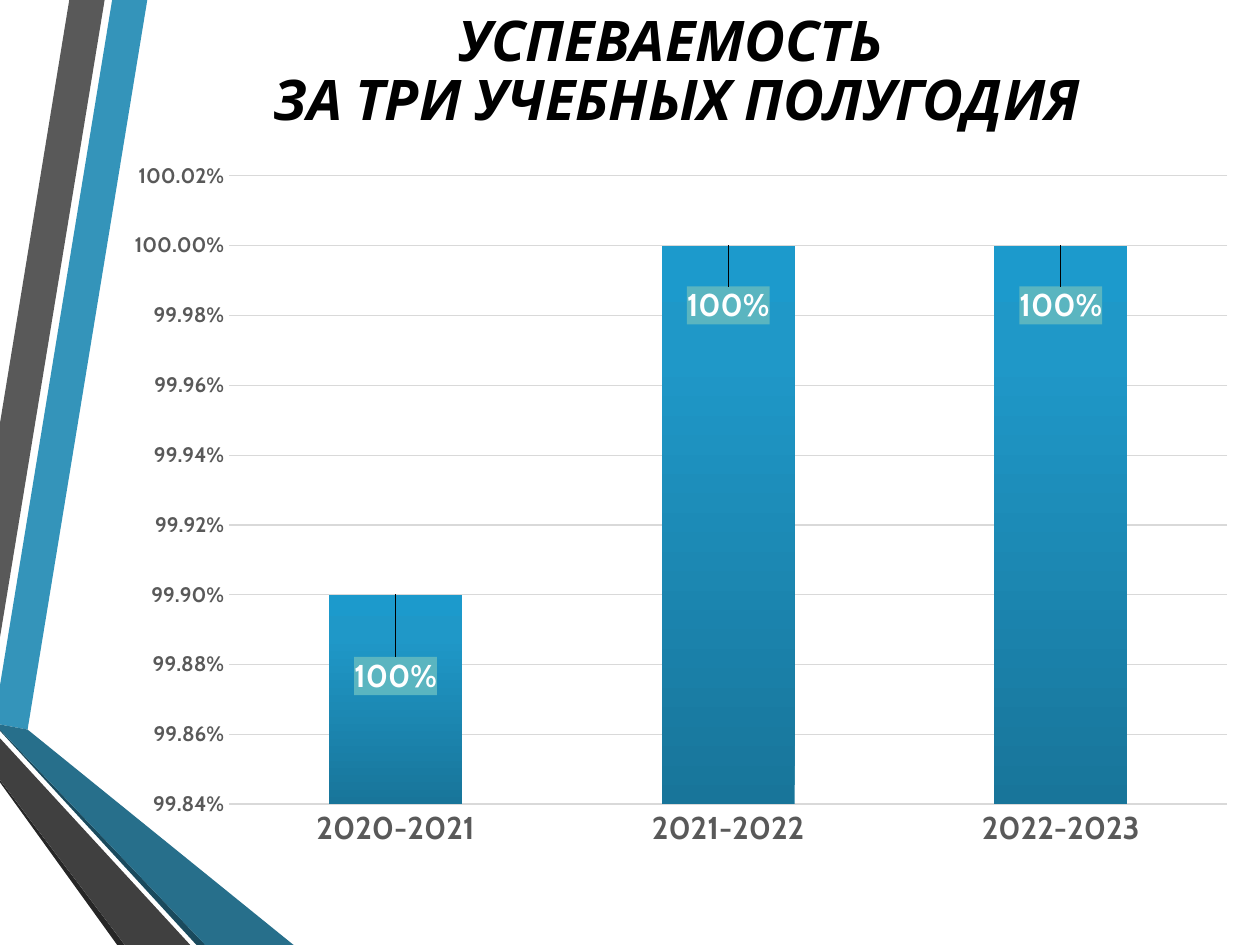
from typing import NamedTuple

from lxml import etree
from pptx import Presentation
from pptx.chart.data import CategoryChartData
from pptx.dml.color import RGBColor
from pptx.enum.chart import XL_CHART_TYPE, XL_LABEL_POSITION, XL_TICK_MARK
from pptx.enum.text import MSO_ANCHOR, PP_ALIGN
from pptx.oxml import parse_xml
from pptx.oxml.ns import nsdecls, qn
from pptx.util import Pt

COLUMNS = XL_CHART_TYPE.COLUMN_CLUSTERED
INSIDE_END = XL_LABEL_POSITION.INSIDE_END
NO_TICK = XL_TICK_MARK.NONE
CENTER = PP_ALIGN.CENTER
MIDDLE = MSO_ANCHOR.MIDDLE

FONT = "Cabin"
COLORS = {
    "black": "000000",
    "white": "FFFFFF",
    "axis_text": "595959",
    "grid": "D9D9D9",
    "label_fill": "5AB5C0",
    "band_blue": "3494BA",
    "band_gray": "595959",
    "fold_black": "262626",
    "fold_navy": "1A4A5D",
    "tail_blue": "276F8B",
    "tail_gray": "404040",
}
BAR_GRADIENT = [(0, "18759A"), (80, "1F98C8"), (100, "1C9ACC")]


class Band(NamedTuple):
    color: str
    points: list[tuple[float, float]]


class YearResult(NamedTuple):
    years: str
    rate: float
    label_drop: float  # share of the chart height


BANDS = [
    Band("band_blue", [(0, 391.7), (0, 414), (15.8, 416.9), (84.2, 0), (64.1, 0)]),
    Band("band_gray", [(59.8, 0), (39.6, 0), (0, 241.9), (0, 364.3)]),
    Band("fold_black", [(0, 445.7), (0, 447.1), (67, 540), (71.3, 540)]),
    Band("fold_navy", [(0, 416.9), (0, 417.6), (112.3, 540), (117.4, 540)]),
    Band("tail_blue", [(0, 416.9), (117.4, 540), (167.8, 540), (15.8, 416.9), (0, 414)]),
    Band("tail_gray", [(0, 445.7), (71.3, 540), (108.7, 540), (0, 421.9)]),
]
RESULTS = [
    YearResult("2020-2021", 0.999, 0.08),
    YearResult("2021-2022", 1, 0.05),
    YearResult("2022-2023", 1, 0.05),
]


def rgb(name: str) -> RGBColor:
    return RGBColor.from_string(COLORS[name])


def style_font(font, size: float, color: str) -> None:
    font.name = FONT
    font.size = Pt(size)
    font.bold = True
    font.color.rgb = rgb(color)


def draw_band(slide, band: Band) -> None:
    start, *rest = [(Pt(x), Pt(y)) for x, y in band.points]
    builder = slide.shapes.build_freeform(*start)
    builder.add_line_segments(rest, close=True)
    shape = builder.convert_to_shape()
    shape.shadow.inherit = False
    shape.fill.solid()
    shape.fill.fore_color.rgb = rgb(band.color)
    shape.line.fill.background()


def draw_title(slide) -> None:
    text_box = slide.shapes.add_textbox(Pt(83.5), Pt(18), Pt(607), Pt(48.2))
    text_frame = text_box.text_frame
    text_frame.word_wrap = True
    text_frame.vertical_anchor = MIDDLE
    text_frame.text = "УСПЕВАЕМОСТЬ \vЗА ТРИ УЧЕБНЫХ ПОЛУГОДИЯ"
    paragraph = text_frame.paragraphs[0]
    paragraph.alignment = CENTER
    paragraph.line_spacing = 0.87
    for run in paragraph.runs:
        style_font(run.font, 32, "black")
        run.font.italic = True


def manual_layout(**settings: object) -> etree._Element:
    items = "".join(f'<c:{name} val="{value}"/>' for name, value in settings.items())
    return parse_xml(
        f'<c:layout {nsdecls("c")}><c:manualLayout>{items}</c:manualLayout></c:layout>'
    )


def place_plot_area(chart) -> None:
    plot_area = chart.element.find(".//" + qn("c:plotArea"))
    for layout in plot_area.findall(qn("c:layout")):
        plot_area.remove(layout)
    plot_area.insert(0, manual_layout(
        layoutTarget="inner", xMode="edge", yMode="edge",
        x=0.1, y=0.04, w=0.88, h=0.88))


def fill_bars(chart) -> None:
    """Shade the bars from the darkest stop at the foot to the lightest at the top."""
    chart.plots[0].series[0].format.fill.gradient()
    gradient = chart.element.find(".//" + qn("a:gradFill"))
    stops = "".join(
        f'<a:gs pos="{position * 1000}"><a:srgbClr val="{color}"/></a:gs>'
        for position, color in BAR_GRADIENT
    )
    gradient.getparent().replace(gradient, parse_xml(
        f'<a:gradFill {nsdecls("a")}><a:gsLst>{stops}</a:gsLst>'
        '<a:lin ang="16200000" scaled="0"/></a:gradFill>'))


def label_bars(chart) -> None:
    series = chart.plots[0].series[0]
    for index in range(len(RESULTS)):
        label = series.points[index].data_label
        style_font(label.font, 18, "white")
        label.position = INSIDE_END
    for element, result in zip(chart.element.iter(qn("c:dLbl")), RESULTS):
        details = [
            manual_layout(x=0, y=result.label_drop),
            parse_xml(f'<c:numFmt {nsdecls("c")} formatCode="0%" sourceLinked="0"/>'),
            parse_xml(
                f'<c:spPr {nsdecls("c", "a")}><a:solidFill>'
                f'<a:srgbClr val="{COLORS["label_fill"]}"/></a:solidFill></c:spPr>'),
        ]
        for old in element.findall(qn("c:spPr")):
            element.remove(old)
        for position, detail in enumerate(details, start=1):
            element.insert(position, detail)


def style_axes(chart) -> None:
    categories, values = chart.category_axis, chart.value_axis
    for axis, size in ((categories, 18), (values, 12)):
        axis.major_tick_mark = NO_TICK
        axis.minor_tick_mark = NO_TICK
        style_font(axis.tick_labels.font, size, "axis_text")
    categories.format.line.color.rgb = rgb("grid")
    categories.format.line.width = Pt(1)
    values.format.line.fill.background()
    values.minimum_scale = 0.9984
    values.maximum_scale = 1.0002
    values.major_unit = 0.0002
    values.tick_labels.number_format = "0.00%"
    values.tick_labels.number_format_is_linked = False
    values.major_gridlines.format.line.color.rgb = rgb("grid")
    values.major_gridlines.format.line.width = Pt(0.75)


def draw_chart(slide) -> None:
    data = CategoryChartData(number_format="0%")
    data.categories = [result.years for result in RESULTS]
    data.add_series("Series 1", [result.rate for result in RESULTS])
    chart = slide.shapes.add_chart(
        COLUMNS, Pt(66.2), Pt(84.2), Pt(648), Pt(408.2), data).chart
    chart.has_legend = False
    chart.has_title = False
    chart.font.name = FONT
    chart.font.size = Pt(10)
    chart.font.color.rgb = rgb("black")
    chart.plots[0].gap_width = 150
    chart.plots[0].vary_by_categories = False
    place_plot_area(chart)
    style_axes(chart)
    fill_bars(chart)
    label_bars(chart)


def main() -> None:
    presentation = Presentation()
    presentation.slide_width = Pt(720)
    presentation.slide_height = Pt(540)
    slide = presentation.slides.add_slide(presentation.slide_layouts[6])
    for band in BANDS:
        draw_band(slide, band)
    draw_title(slide)
    draw_chart(slide)
    presentation.save("out.pptx")


if __name__ == "__main__":
    main()
